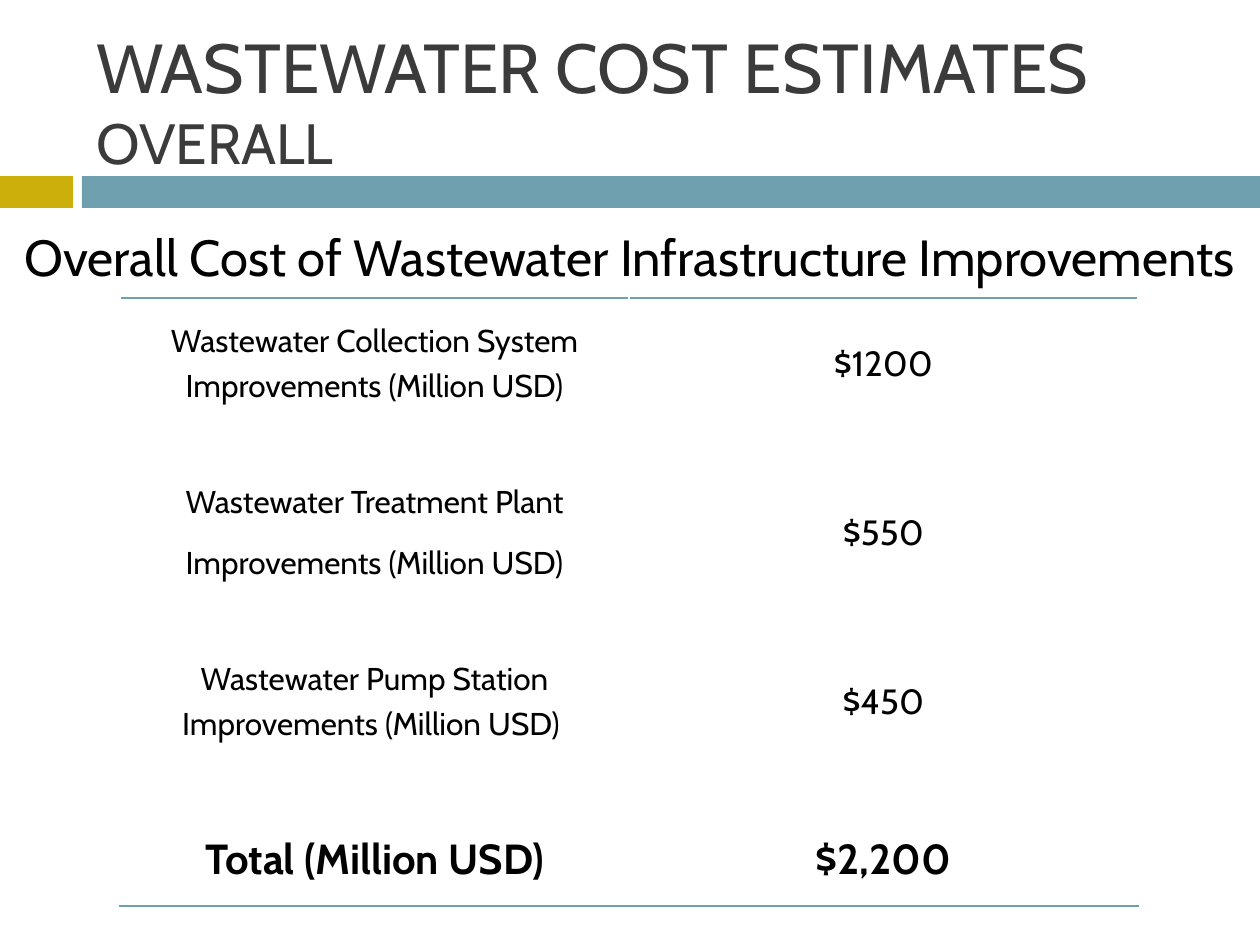
"""Build the wastewater cost estimates slide."""
from dataclasses import dataclass

from lxml import etree
from pptx import Presentation
from pptx.dml.color import RGBColor
from pptx.enum.shapes import MSO_SHAPE
from pptx.enum.text import MSO_ANCHOR, PP_ALIGN
from pptx.oxml.ns import qn
from pptx.util import Emu, Pt

RECTANGLE = MSO_SHAPE.RECTANGLE
MIDDLE, TOP = MSO_ANCHOR.MIDDLE, MSO_ANCHOR.TOP
CENTER, LEFT = PP_ALIGN.CENTER, PP_ALIGN.LEFT
EMU_PER_PX = 914400 / 126


@dataclass(frozen=True)
class Theme:
    font: str = "Cabin"
    gold: str = "CCAF0A"
    teal: str = "6EA0B0"
    heading: str = "3B3B3B"
    text: str = "000000"
    title_size: float = 39.6
    subtitle_size: float = 32.4
    caption_size: float = 29
    label_size: float = 18
    amount_size: float = 20
    total_size: float = 24


@dataclass(frozen=True)
class Box:
    left: int
    top: int
    width: int
    height: int

    def emu(self) -> tuple[Emu, ...]:
        return tuple(px(value) for value in (self.left, self.top, self.width, self.height))


@dataclass(frozen=True)
class Band:
    box: Box
    color: str


@dataclass(frozen=True)
class CostRow:
    label: tuple[str, ...]
    amount: str
    height: int = 126
    label_size: float = Theme.label_size
    amount_size: float = Theme.amount_size
    bold: bool = False
    border: str = ""


THEME = Theme()
SPACER_HEIGHT = 43
COLUMN_WIDTH = 509
TABLE_LEFT, TABLE_TOP = 120, 298
BANDS = (
    Band(Box(0, 176, 73, 32), THEME.gold),
    Band(Box(82, 176, 1178, 32), THEME.teal),
)
COST_ROWS = (
    CostRow(("Wastewater Collection System Improvements (Million USD)",), "$1200", border="a:lnT"),
    CostRow(("Wastewater Treatment Plant", "Improvements (Million USD)"), "$550"),
    CostRow(("Wastewater Pump Station Improvements (Million USD) ",), "$450"),
    CostRow(("Total (Million USD)",), "$2,200", 101, THEME.total_size, THEME.total_size, True, "a:lnB"),
)


def px(value: int) -> Emu:
    return Emu(round(value * EMU_PER_PX))


def add_run(paragraph, text: str, size: float, color: str, bold: bool = False) -> None:
    run = paragraph.add_run()
    run.text = text
    run.font.name = THEME.font
    run.font.size = Pt(size)
    run.font.bold = bold
    run.font.color.rgb = RGBColor.from_string(color)


def add_band(slide, band: Band) -> None:
    shape = slide.shapes.add_shape(RECTANGLE, *band.box.emu())
    shape.shadow.inherit = False
    shape.fill.solid()
    shape.fill.fore_color.rgb = RGBColor.from_string(band.color)
    shape.line.fill.background()


def add_text_box(slide, box: Box, anchor: MSO_ANCHOR, alignment: PP_ALIGN):
    frame = slide.shapes.add_textbox(*box.emu()).text_frame
    frame.word_wrap = True
    frame.vertical_anchor = anchor
    paragraph = frame.paragraphs[0]
    paragraph.alignment = alignment
    return paragraph


def add_border(cell, tag: str) -> None:
    line = etree.Element(qn(tag), w=str(Pt(1)))
    fill = etree.SubElement(line, qn("a:solidFill"))
    etree.SubElement(fill, qn("a:srgbClr"), val=THEME.teal)
    cell._tc.get_or_add_tcPr().insert(0, line)


def fill_cell(cell, lines: tuple[str, ...], size: float, row: CostRow) -> None:
    for index, text in enumerate(lines):
        frame = cell.text_frame
        paragraph = frame.add_paragraph() if index else frame.paragraphs[0]
        paragraph.alignment = CENTER
        paragraph.line_spacing = 1.15
        paragraph.space_after = Pt(10)
        add_run(paragraph, text, size, THEME.text, row.bold)
    if row.border:
        add_border(cell, row.border)


def add_cost_table(slide, rows: tuple[CostRow, ...]) -> None:
    height = sum(row.height for row in rows) + SPACER_HEIGHT * (len(rows) - 1)
    box = Box(TABLE_LEFT, TABLE_TOP, 2 * COLUMN_WIDTH, height)
    table = slide.shapes.add_table(2 * len(rows) - 1, 2, *box.emu()).table
    table.first_row = table.horz_banding = False
    for column in table.columns:
        column.width = px(COLUMN_WIDTH)
    for table_row in table.rows:
        table_row.height = px(SPACER_HEIGHT)
    for cell in table.iter_cells():
        cell.fill.background()
        cell.vertical_anchor = MIDDLE
        cell.margin_left = cell.margin_right = px(9)
        cell.margin_top = cell.margin_bottom = 0
    for index, row in enumerate(rows):
        table.rows[2 * index].height = px(row.height)
        fill_cell(table.cell(2 * index, 0), row.label, row.label_size, row)
        fill_cell(table.cell(2 * index, 1), (row.amount,), row.amount_size, row)


def main() -> None:
    presentation = Presentation()
    presentation.slide_width, presentation.slide_height = px(1260), px(945)
    slide = presentation.slides.add_slide(presentation.slide_layouts[6])
    for band in BANDS:
        add_band(slide, band)
    caption = add_text_box(slide, Box(0, 220, 1260, 620), TOP, CENTER)
    caption.space_before = Pt(7)
    add_run(caption, "Overall Cost of Wastewater Infrastructure Improvements", THEME.caption_size, THEME.text)
    add_cost_table(slide, COST_ROWS)
    title = add_text_box(slide, Box(84, 32, 1124, 136), MIDDLE, LEFT)
    add_run(title, "WASTEWATER COST ESTIMATES", THEME.title_size, THEME.heading)
    title.add_line_break()
    add_run(title, "OVERALL", THEME.subtitle_size, THEME.heading)
    presentation.save("out.pptx")


if __name__ == "__main__":
    main()
